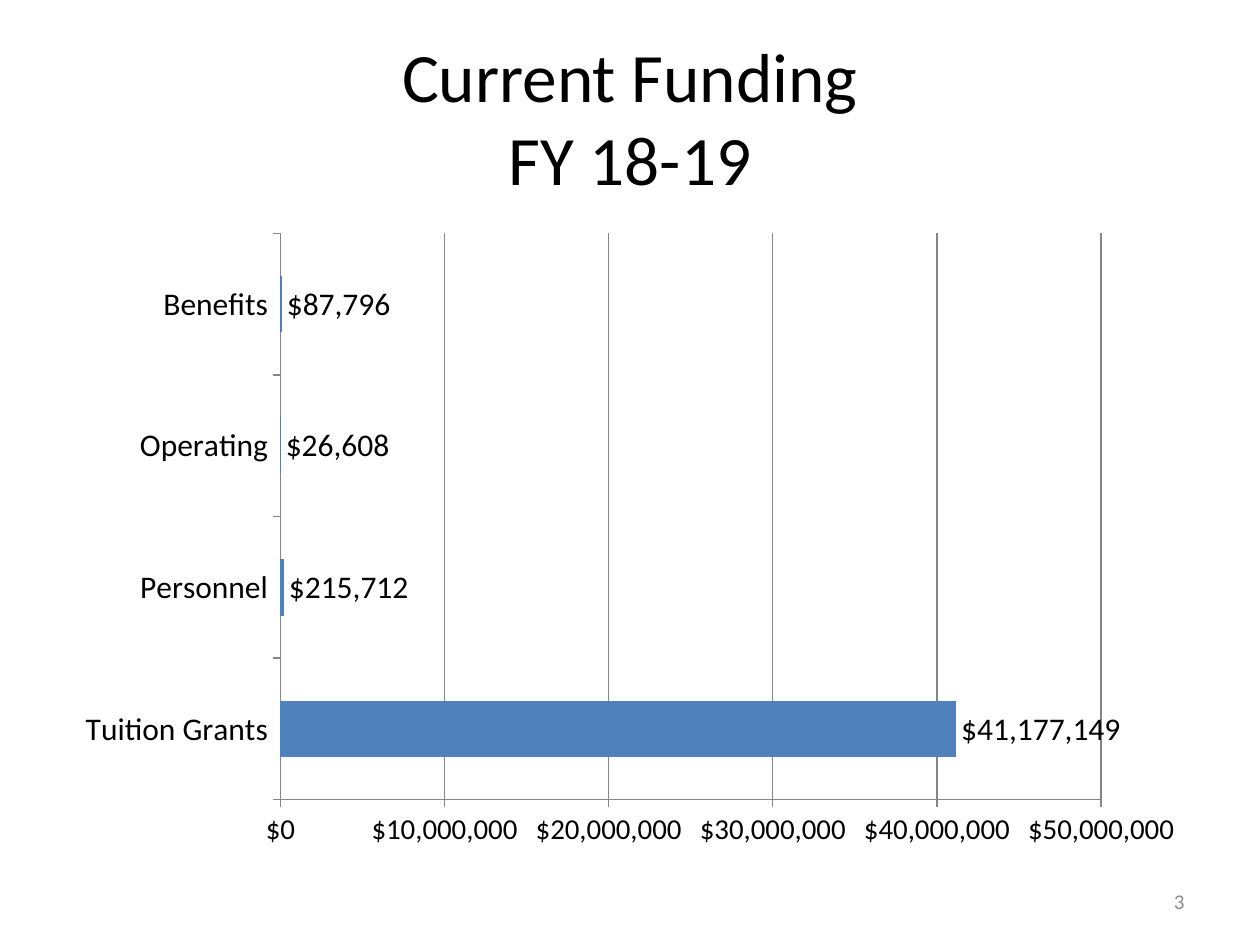
import pptx
import pptx.util
import pptx.chart.data
import pptx.dml.color
import pptx.enum.chart
import pptx.enum.text
from pptx.util import Inches

FONT = "Calibri"
MONEY = '"$"#,##0'
COSTS = {
    "Tuition Grants": 41177149,
    "Personnel": 215712,
    "Operating": 26608,
    "Benefits": 87796,
}


def paint(hue):
    return pptx.dml.color.RGBColor.from_string(hue)


def style(font, size, hue="000000"):
    font.name = FONT
    font.size = pptx.util.Pt(size)
    font.color.rgb = paint(hue)


def write(frame, text, size, hue, align):
    frame.word_wrap = True
    frame.vertical_anchor = pptx.enum.text.MSO_ANCHOR.MIDDLE
    frame.text = text
    para = frame.paragraphs[0]
    para.alignment = align
    style(para.font, size, hue)


def add_title(slide, box):
    title = slide.shapes.title
    title.left, title.top, title.width, title.height = box
    write(title.text_frame, "Current Funding\vFY 18-19", 39.6, "000000",
          pptx.enum.text.PP_ALIGN.CENTER)


def add_number(slide, box):
    note = slide.shapes.add_textbox(*box)
    write(note.text_frame, "3", 12, "8C8C8C", pptx.enum.text.PP_ALIGN.RIGHT)


def add_costs(slide, box):
    enum = pptx.enum.chart
    data = pptx.chart.data.CategoryChartData(number_format=MONEY)
    data.categories = list(COSTS)
    data.add_series("Series 1", list(COSTS.values()))
    chart = slide.shapes.add_chart(
        enum.XL_CHART_TYPE.BAR_CLUSTERED, *box, data).chart
    chart.has_legend = False
    chart.has_title = False
    style(chart.font, 18)

    # Bars and their labels
    plot = chart.plots[0]
    plot.gap_width = 150
    plot.vary_by_categories = False
    fill = plot.series[0].format.fill
    fill.solid()
    fill.fore_color.rgb = paint("4F81BD")
    plot.has_data_labels = True
    labels = plot.data_labels
    labels.show_value = True
    labels.number_format = MONEY
    labels.number_format_is_linked = False
    labels.position = enum.XL_LABEL_POSITION.OUTSIDE_END
    style(labels.font, 18)

    # Axes and grid
    value = chart.value_axis
    value.minimum_scale = 0
    value.maximum_scale = 50000000
    value.major_unit = 10000000
    value.has_major_gridlines = True
    value.tick_labels.number_format = MONEY
    value.tick_labels.number_format_is_linked = False
    style(value.tick_labels.font, 16.5)
    for axis in (chart.category_axis, value):
        axis.major_tick_mark = enum.XL_TICK_MARK.OUTSIDE
        axis.format.line.color.rgb = paint("868686")
    value.major_gridlines.format.line.color.rgb = paint("868686")


def main():
    deck = pptx.Presentation()
    deck.slide_width, deck.slide_height = Inches(10), Inches(7.5)
    slide = deck.slides.add_slide(deck.slide_layouts[5])
    left, width = Inches(0.5), Inches(9)
    add_title(slide, (left, Inches(0.3), width, Inches(1.25)))
    add_costs(slide, (left, Inches(1.75), width, Inches(5.08)))
    add_number(slide, (Inches(7.17), Inches(6.95), Inches(2.33), Inches(0.4)))
    deck.save("out.pptx")


if __name__ == "__main__":
    main()
